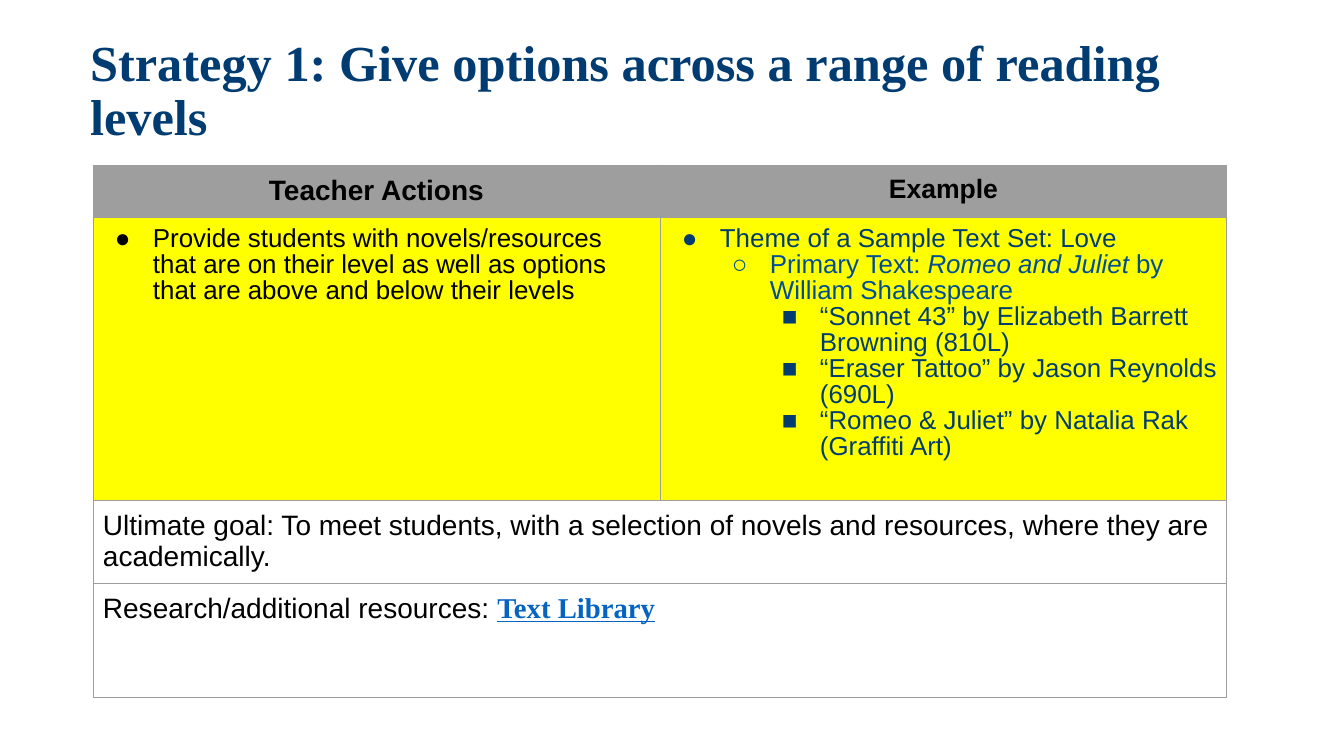
from lxml import etree
from pptx import Presentation
from pptx import util as u
from pptx.dml.color import RGBColor
from pptx.enum import text
from pptx.oxml.ns import qn

EMU_PER_PX = 914400 / 100.8
NAVY, BLUE, LINK, BLACK = "003C71", "004E95", "0563C1", "000000"
GRAY, YELLOW = "9E9E9E", "FFFF00"
SERIF = "Times New Roman"
ROW_HEIGHTS = [52, 283, 83, 115]
COLUMN_WIDTH = 567
INDENT, HANGING = 50, 38

EXAMPLES = [
    (0, "●", NAVY, [("Theme of a Sample Text Set: Love", False)]),
    (1, "○", BLUE, [("Primary Text: ", False), ("Romeo and Juliet", True),
                    (" by William Shakespeare", False)]),
    (2, "■", NAVY, [("“Sonnet 43” by Elizabeth Barrett Browning (810L)", False)]),
    (2, "■", NAVY, [("“Eraser Tattoo” by Jason Reynolds (690L)", False)]),
    (2, "■", NAVY, [("“Romeo & Juliet” by Natalia Rak (Graffiti Art)", False)]),
]


def px(length):
    return u.Emu(round(length * EMU_PER_PX))


def rgb(color):
    return RGBColor.from_string(color)


def add_text(paragraph, words, size=20, color=BLACK, font="Arial",
             bold=False, italic=False, underline=False):
    run = paragraph.add_run()
    run.text = words
    style = run.font
    style.size, style.name = u.Pt(size), font
    style.bold, style.italic, style.underline = bold, italic, underline
    style.color.rgb = rgb(color)


def set_bullet(paragraph, level, symbol, color):
    paragraph.level = level
    paragraph.line_spacing = 0.9
    props = paragraph._p.get_or_add_pPr()
    props.set("marL", str(px(INDENT * (level + 1))))
    props.set("indent", str(-px(HANGING)))
    bullet_color = etree.SubElement(props, qn("a:buClr"))
    etree.SubElement(bullet_color, qn("a:srgbClr"), val=color)
    etree.SubElement(props, qn("a:buFont"), typeface="Arial")
    etree.SubElement(props, qn("a:buChar"), char=symbol)


def format_cell(cell, fill):
    cell.margin_left = cell.margin_right = px(10)
    cell.margin_top = cell.margin_bottom = px(10)
    if fill:
        cell.fill.solid()
        cell.fill.fore_color.rgb = rgb(fill)
    else:
        cell.fill.background()
    props = cell._tc.get_or_add_tcPr()
    for position, side in enumerate(("lnL", "lnR", "lnT", "lnB")):
        border = etree.Element(qn(f"a:{side}"), w=str(u.Pt(0.75)))
        solid = etree.SubElement(border, qn("a:solidFill"))
        etree.SubElement(solid, qn("a:srgbClr"), val=GRAY)
        props.insert(position, border)


def add_title(slide):
    title = slide.shapes.title
    title.left, title.top, title.width, title.height = map(px, (80, 19, 1159, 146))
    frame = title.text_frame
    frame.auto_size = text.MSO_AUTO_SIZE.NONE
    frame.word_wrap = True
    frame.vertical_anchor = text.MSO_ANCHOR.MIDDLE
    heading = frame.paragraphs[0]
    heading.alignment = text.PP_ALIGN.LEFT
    heading.line_spacing = 0.9
    add_text(heading, "Strategy 1: Give options across a range of reading levels",
             size=36, color=NAVY, font=SERIF, bold=True)


def add_strategy_grid(slide):
    """Add the bordered table, with its last two rows merged, and return it."""
    grid = slide.shapes.add_table(len(ROW_HEIGHTS), 2, px(93), px(165),
                                  px(2 * COLUMN_WIDTH), px(sum(ROW_HEIGHTS))).table
    grid.first_row = grid.horz_banding = False
    for column in grid.columns:
        column.width = px(COLUMN_WIDTH)
    for row, height, fill in zip(grid.rows, ROW_HEIGHTS, (GRAY, YELLOW, None, None)):
        row.height = px(height)
        for cell in row.cells:
            format_cell(cell, fill)
    for index in (2, 3):
        grid.cell(index, 0).merge(grid.cell(index, 1))
    return grid


def fill_headers(grid):
    for column, (label, size) in enumerate((("Teacher Actions", 20), ("Example", 19))):
        header = grid.cell(0, column).text_frame.paragraphs[0]
        header.alignment = text.PP_ALIGN.CENTER
        add_text(header, label, size=size, bold=True)


def fill_strategy(grid):
    action = grid.cell(1, 0).text_frame.paragraphs[0]
    set_bullet(action, 0, "●", BLACK)
    add_text(action, "Provide students with novels/resources that are on their level "
                     "as well as options that are above and below their levels", size=18.5)
    examples = grid.cell(1, 1).text_frame
    for index, (level, symbol, color, parts) in enumerate(EXAMPLES):
        example = examples.add_paragraph() if index else examples.paragraphs[0]
        set_bullet(example, level, symbol, color)
        for words, italic in parts:
            add_text(example, words, size=18.5, color=color, italic=italic)


def fill_footer_rows(grid):
    goal = grid.cell(2, 0).text_frame.paragraphs[0]
    add_text(goal, "Ultimate goal: To meet students, with a selection of novels "
                   "and resources, where they are academically.")
    resources = grid.cell(3, 0).text_frame.paragraphs[0]
    add_text(resources, "Research/additional resources: ")
    add_text(resources, "Text Library", size=20.5, color=LINK, font=SERIF,
             bold=True, underline=True)


def main():
    deck = Presentation()
    deck.slide_width, deck.slide_height = px(1344), px(756)
    slide = deck.slides.add_slide(deck.slide_layouts[5])
    add_title(slide)
    grid = add_strategy_grid(slide)
    fill_headers(grid)
    fill_strategy(grid)
    fill_footer_rows(grid)
    deck.save("out.pptx")


if __name__ == "__main__":
    main()
